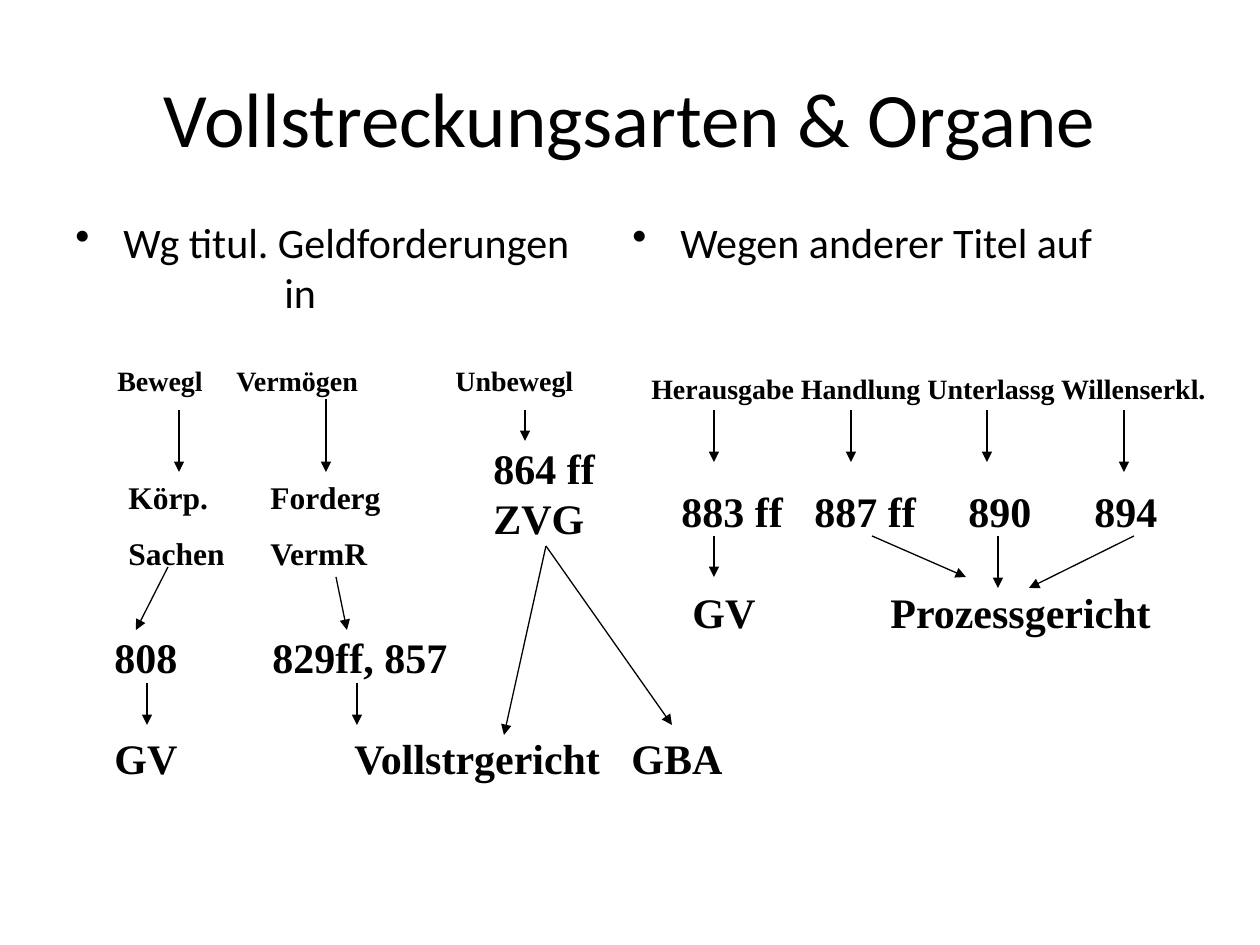
from lxml import etree
from pptx import Presentation
from pptx import util as u
from pptx.dml.color import RGBColor
from pptx.enum import shapes, text
from pptx.oxml.ns import qn

PX = 914400 // 126
COLORS = {"ink": "000000", "paper": "FFFFFF"}
SANS, SERIF = "Calibri", "Times New Roman"


def px(length):
    return u.Emu(length * PX)


def rgb(name):
    return RGBColor.from_string(COLORS[name])


def set_bullet(paragraph, hang):
    props = paragraph._p.get_or_add_pPr()
    props.set("marL", str(px(hang)))
    props.set("indent", str(px(-hang)))
    etree.SubElement(props, qn("a:buChar"), char="•")


def set_tabs(paragraph, stops):
    tabs = etree.SubElement(paragraph._p.get_or_add_pPr(), qn("a:tabLst"))
    for stop in stops:
        etree.SubElement(tabs, qn("a:tab"), pos=str(px(stop)), algn="l")


def add_text(slide, box, lines, size, font=SERIF, bold=True, align=text.PP_ALIGN.LEFT,
             anchor=text.MSO_ANCHOR.TOP, wrap=True, gap=0, hang=0, second_indent=0):
    frame = slide.shapes.add_textbox(*map(px, box)).text_frame
    frame.word_wrap = wrap
    frame.vertical_anchor = anchor
    for index, (words, stops) in enumerate(lines):
        paragraph = frame.add_paragraph() if index else frame.paragraphs[0]
        if hang and not index:
            set_bullet(paragraph, hang)
        if index and second_indent:
            paragraph._p.get_or_add_pPr().set("marL", str(px(second_indent)))
        if stops:
            set_tabs(paragraph, stops)
        paragraph.alignment = align
        if index and gap:
            paragraph.space_before = u.Pt(gap)
        run = paragraph.add_run()
        run.text = words
        run.font.name = font
        run.font.size = u.Pt(size)
        run.font.bold = bold
        run.font.color.rgb = rgb("ink")


def add_arrow(slide, start, end):
    arrow = slide.shapes.add_connector(
        shapes.MSO_CONNECTOR.STRAIGHT, *map(px, start + end))
    arrow.line.color.rgb = rgb("ink")
    arrow.line.width = u.Pt(0.75)
    props = arrow._element.spPr
    etree.SubElement(props.find(qn("a:ln")), qn("a:tailEnd"), type="triangle")
    etree.SubElement(props, qn("a:effectLst"))


def add_headings(slide):
    add_text(slide, (63, 38, 1134, 158), [("Vollstreckungsarten & Organe", ())], 44,
             font=SANS, bold=False, align=text.PP_ALIGN.CENTER,
             anchor=text.MSO_ANCHOR.MIDDLE)
    add_text(slide, (63, 210, 557, 624),
             [("Wg titul. Geldforderungen", ()), ("in", ())], 24,
             font=SANS, bold=False, hang=48, second_indent=209)
    add_text(slide, (620, 210, 567, 634), [("Wegen anderer Titel auf", ())], 24,
             font=SANS, bold=False, hang=48)


def add_money_claims(slide):
    add_text(slide, (105, 357, 504, 47),
             [("Bewegl\tVermögen\tUnbewegl", (119, 338))], 16)
    add_text(slide, (116, 472, 294, 108),
             [("Körp.\tForderg", (142,)), ("Sachen\tVermR", (142,))], 18, gap=10)
    add_text(slide, (92, 625, 649, 164),
             [("\t808\t829ff, 857", (10, 168)),
              ("\tGV\tVollstrgericht\tGBA", (10, 250, 527))], 24, wrap=False, gap=29)
    add_text(slide, (481, 436, 127, 113), [("864 ff", ()), ("ZVG", ())], 24, wrap=False)
    for start, end in [
        ((179, 410), (179, 472)), ((326, 399), (326, 472)), ((525, 410), (525, 441)),
        ((168, 567), (136, 630)), ((336, 577), (347, 630)),
        ((147, 683), (147, 725)), ((357, 683), (357, 725)),
        ((546, 546), (504, 735)), ((546, 546), (672, 725)),
    ]:
        add_arrow(slide, start, end)


def add_other_titles(slide):
    add_text(slide, (639, 365, 583, 47),
             [("Herausgabe Handlung Unterlassg Willenserkl.", ())], 16, wrap=False)
    add_text(slide, (659, 479, 512, 164),
             [("\t883 ff\t887 ff\t890\t894", (10, 143, 297, 423)),
              ("\tGV\tProzessgericht", (21, 219))], 24, wrap=False, gap=29)
    for start, end in [
        ((714, 410), (714, 462)), ((851, 410), (851, 462)),
        ((987, 410), (987, 462)), ((1124, 410), (1124, 472)),
        ((714, 536), (714, 577)), ((872, 536), (966, 577)),
        ((998, 536), (998, 588)), ((1134, 536), (1029, 588)),
    ]:
        add_arrow(slide, start, end)


def main():
    deck = Presentation()
    deck.slide_width, deck.slide_height = px(1260), px(945)
    slide = deck.slides.add_slide(deck.slide_layouts[6])
    slide.background.fill.solid()
    slide.background.fill.fore_color.rgb = rgb("paper")
    add_headings(slide)
    add_money_claims(slide)
    add_other_titles(slide)
    deck.save("out.pptx")


if __name__ == "__main__":
    main()
